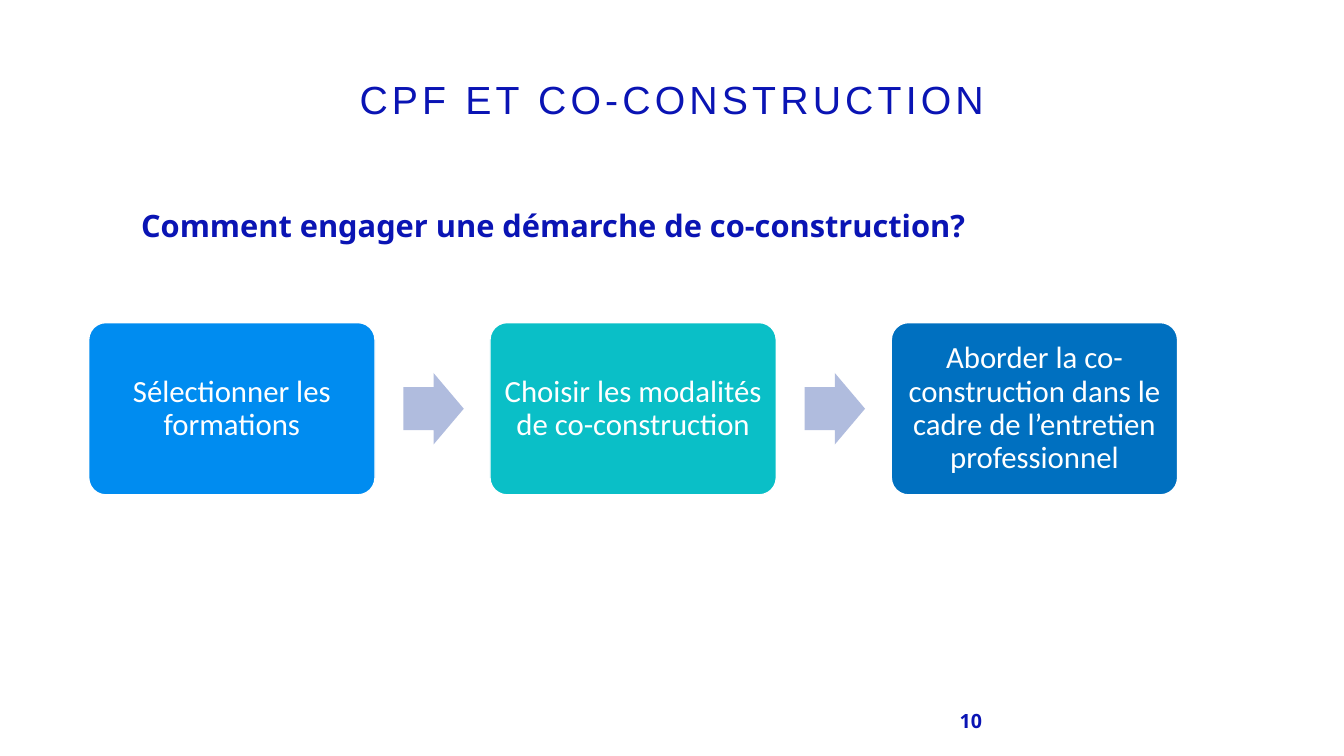
from dataclasses import dataclass

from lxml.etree import SubElement
from pptx import Presentation
from pptx.dml.color import RGBColor
from pptx.enum.shapes import MSO_SHAPE as SHAPE
from pptx.enum.text import MSO_ANCHOR as ANCHOR, MSO_AUTO_SIZE as AUTOSIZE, PP_ALIGN as ALIGN
from pptx.oxml.ns import qn
from pptx.util import Emu, Pt

PX = 9144  # EMU per px, 100 px to the inch


@dataclass(frozen=True)
class Theme:
    navy: str = "0A14B4"
    white: str = "FFFFFF"
    arrow: str = "B0BCDE"
    title_font: str = "Arial"
    body_font: str = "Noto Sans"
    step_font: str = "Calibri"
    title_size: int = 28
    text_size: int = 22
    number_size: int = 14


THEME = Theme()
STEPS = [
    ("Sélectionner les formations", "008CF0"),
    ("Choisir les modalités de co-construction", "0ABFC7"),
    ("Aborder la co-construction dans le cadre de l’entretien professionnel", "0070C0"),
]
STEP_LEFT, STEP_TOP, STEP_W, STEP_H, STEP_PITCH = 88, 320, 284, 171, 398
ARROW_OFFSET, ARROW_W, ARROW_H = 312, 60, 71


def px(*lengths):
    return [Emu(n * PX) for n in lengths]


def place(sp, *box):
    sp.left, sp.top, sp.width, sp.height = px(*box)


def write(sp, text, font, size, color, bold=False, align=ALIGN.LEFT,
          anchor=ANCHOR.MIDDLE, spacing=1.0):
    """Fill the shape with one formatted paragraph and return its run."""
    tf = sp.text_frame
    tf.word_wrap = True
    tf.auto_size = AUTOSIZE.NONE
    tf.vertical_anchor = anchor
    p = tf.paragraphs[0]
    p.alignment = align
    p.line_spacing = spacing
    p.space_before = Pt(0)
    r = p.add_run()
    r.text = text
    r.font.name = font
    r.font.size = Pt(size)
    r.font.bold = bold
    r.font.color.rgb = RGBColor.from_string(color)
    return r


def add_title(slide, text):
    sp = slide.shapes.title
    place(sp, 0, 59, 1333, 83)
    r = write(sp, text, THEME.title_font, THEME.title_size, THEME.navy,
              align=ALIGN.CENTER, spacing=0.9)
    r.font._element.set("spc", "300")


def add_question(slide, text):
    sp = slide.placeholders[1]
    place(sp, 130, 193, 1063, 478)
    pPr = sp.text_frame.paragraphs[0]._p.get_or_add_pPr()
    pPr.set("marL", "0")
    pPr.set("indent", "0")
    SubElement(pPr, qn("a:buNone"))
    write(sp, text, THEME.body_font, THEME.text_size, THEME.navy, bold=True,
          anchor=ANCHOR.TOP, spacing=1.2)


def add_page_number(slide, text):
    sp = slide.shapes.add_textbox(*px(942, 695, 300, 40))
    write(sp, text, THEME.body_font, THEME.number_size, THEME.navy, bold=True)


def add_filled(slide, kind, box, color, adjustments):
    sp = slide.shapes.add_shape(kind, *px(*box))
    sp.shadow.inherit = False
    for i, value in enumerate(adjustments):
        sp.adjustments[i] = value
    sp.fill.solid()
    sp.fill.fore_color.rgb = RGBColor.from_string(color)
    return sp


def add_step(slide, left, text, color):
    sp = add_filled(slide, SHAPE.ROUNDED_RECTANGLE,
                    (left, STEP_TOP, STEP_W, STEP_H), color, [0.1])
    sp.line.color.rgb = RGBColor.from_string(THEME.white)
    sp.line.width = Pt(1)
    tf = sp.text_frame
    tf.margin_left = tf.margin_right = tf.margin_top = tf.margin_bottom = px(9)[0]
    write(sp, text, THEME.step_font, THEME.text_size, THEME.white,
          align=ALIGN.CENTER, spacing=0.9)


def add_arrow(slide, left):
    top = STEP_TOP + (STEP_H - ARROW_H) // 2
    sp = add_filled(slide, SHAPE.RIGHT_ARROW, (left, top, ARROW_W, ARROW_H),
                    THEME.arrow, [0.6, 0.5])
    sp.line.fill.background()


def main():
    prs = Presentation()
    prs.slide_width, prs.slide_height = px(1333, 750)
    slide = prs.slides.add_slide(prs.slide_layouts[1])
    add_title(slide, "CPF ET CO-CONSTRUCTION")
    add_page_number(slide, "10")
    add_question(slide, "Comment engager une démarche de co-construction?")
    for i, (text, color) in enumerate(STEPS):
        left = STEP_LEFT + i * STEP_PITCH
        add_step(slide, left, text, color)
        if i < len(STEPS) - 1:
            add_arrow(slide, left + ARROW_OFFSET)
    prs.save("out.pptx")


if __name__ == "__main__":
    main()
